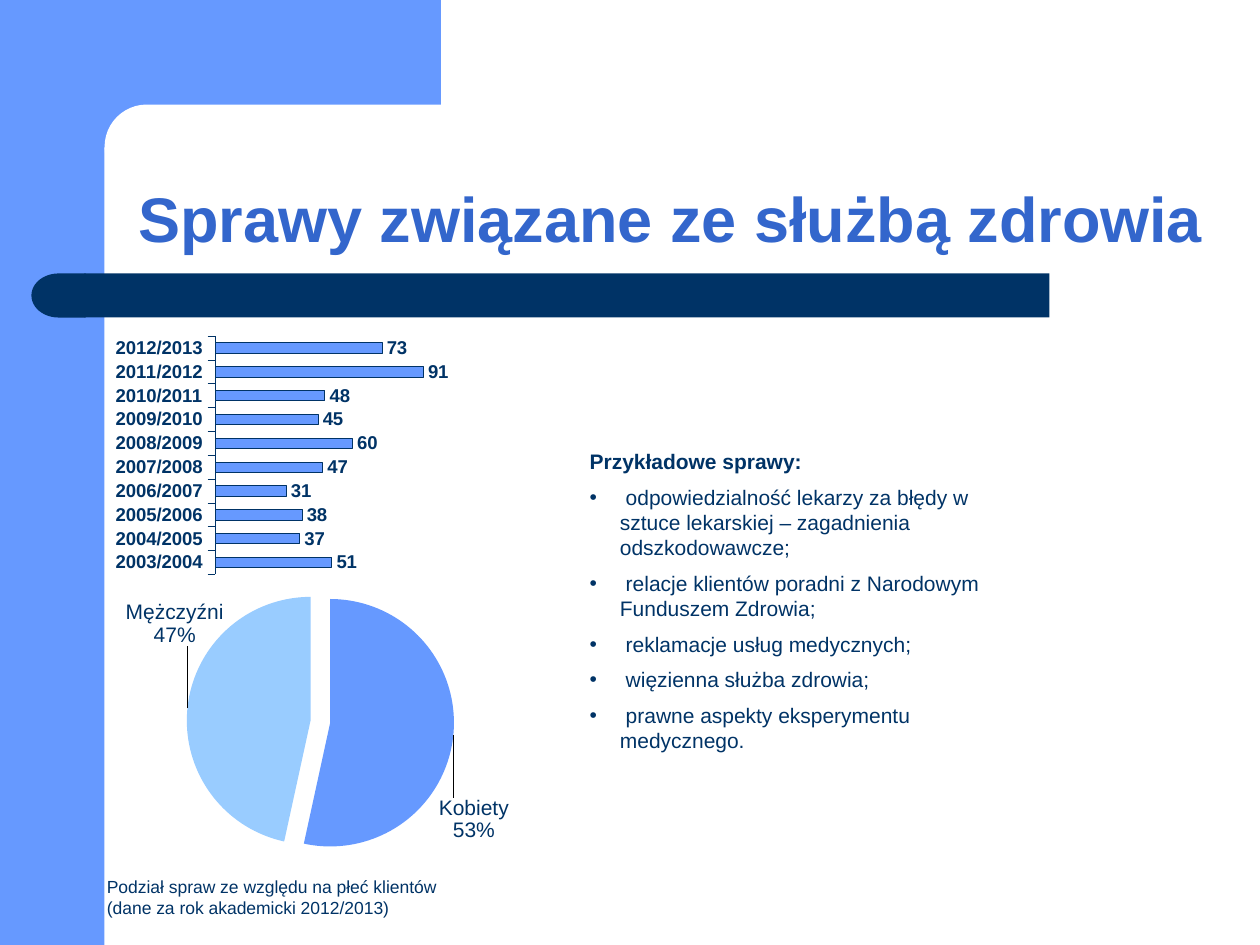
import copy
import pptx
import pptx.util
import pptx.chart.data
import pptx.dml.color
import pptx.enum.chart
import pptx.enum.shapes
import pptx.enum.text
import pptx.oxml
import pptx.oxml.ns
from pptx.util import Inches, Pt

THEME = {
    "font": "Arial",
    "blue": "6699FF", "light": "99CCFF", "navy": "003366",
    "title": "3366CC", "white": "FFFFFF",
    "title_size": 36, "body_size": 12, "caption_size": 10, "axis_size": 10.6,
}

TITLE = "Sprawy związane ze służbą zdrowia"
LIST_HEADING = "Przykładowe sprawy:"
CASES = [
    " odpowiedzialność lekarzy za błędy w sztuce lekarskiej – zagadnienia odszkodowawcze;",
    " relacje klientów poradni z Narodowym Funduszem Zdrowia;",
    " reklamacje usług medycznych;",
    " więzienna służba zdrowia;",
    " prawne aspekty eksperymentu medycznego.",
]
CAPTION = "Podział spraw ze względu na płeć klientów (dane za rok akademicki 2012/2013)"
FIRST_YEAR = 2003
CASES_PER_YEAR = [51, 37, 38, 31, 47, 60, 45, 48, 91, 73]
CLIENTS = {"Kobiety": 39, "Mężczyźni": 34}
SLICES = [("blue", (-0.04, 0.2)), ("light", (0.08, -0.2))]

SHAPE = pptx.enum.shapes.MSO_SHAPE
BACKDROP = [
    (SHAPE.RECTANGLE, (0, 0, 0.83, 7.5), "blue", None),
    (SHAPE.RECTANGLE, (0.75, 0, 2.75, 1.17), "blue", None),
    (SHAPE.ROUNDED_RECTANGLE, (0.83, 0.83, 5.58, 0.67), "white", 0.5),
    (SHAPE.RECTANGLE, (0.67, 2.17, 7.66, 0.35), "navy", None),
    (SHAPE.FLOWCHART_DELAY, (0.25, 2.17, 0.43, 0.35), "navy", None),
]
PLACES = {
    "title": (1, 0.83, 8.75, 1.25),
    "list": (4.58, 3.51, 3.67, 2.2),
    "bars": (0.83, 2.49, 3.13, 2.2),
    "pie": (0.27, 4.54, 4.33, 2.4),
    "caption": (0.75, 6.9, 3.03, 0.43),
}
BAR_PLOT = (0.28, 0.08, 0.58, 0.86)
PIE_PLOT = (0.28, 0.05, 0.49, 0.89)
EXPLOSION = 8
HANGING = 0.24


def color(name):
    return pptx.dml.color.RGBColor.from_string(THEME[name])


def inches(place):
    return [Inches(length) for length in place]


def put(shape, place):
    shape.left, shape.top, shape.width, shape.height = inches(place)


def style(font, size, tint="navy", bold=False):
    font.name = THEME["font"]
    font.size = Pt(THEME[size])
    font.bold = bold
    font.color.rgb = color(tint)


def fill(target, tint):
    target.fill.solid()
    target.fill.fore_color.rgb = color(tint)


def chart_xml(tag, content="", attributes=""):
    names = pptx.oxml.ns.nsdecls("c")
    return pptx.oxml.parse_xml(f"<c:{tag} {names} {attributes}>{content}</c:{tag}>")


def add_backdrop(page):
    for kind, place, tint, rounding in BACKDROP:
        shape = page.shapes.add_shape(kind, *inches(place))
        shape.shadow.inherit = False
        fill(shape, tint)
        shape.line.fill.background()
        if rounding is not None:
            shape.adjustments[0] = rounding
        if kind == SHAPE.FLOWCHART_DELAY:
            shape.element.spPr.xfrm.set("flipH", "1")


def bring_forward(shape):
    shape.element.getparent().append(shape.element)


def add_title(page):
    title = page.shapes.title
    put(title, PLACES["title"])
    bring_forward(title)
    frame = title.text_frame
    frame.text = TITLE
    frame.auto_size = pptx.enum.text.MSO_AUTO_SIZE.NONE
    frame.vertical_anchor = pptx.enum.text.MSO_ANCHOR.BOTTOM
    para = frame.paragraphs[0]
    para.alignment = pptx.enum.text.PP_ALIGN.LEFT
    para.line_spacing = 0.9
    style(para.font, "title_size", "title", True)


def set_bullet(para, bulleted):
    props = para._p.get_or_add_pPr()
    indent = Inches(HANGING) if bulleted else 0
    props.set("marL", str(indent))
    props.set("indent", str(-indent))
    tag = 'a:buChar char="•"' if bulleted else "a:buNone"
    props.append(pptx.oxml.parse_xml(f"<{tag} {pptx.oxml.ns.nsdecls('a')}/>"))


def add_list(page):
    body = page.placeholders[1]
    put(body, PLACES["list"])
    bring_forward(body)
    frame = body.text_frame
    frame.text = "\n".join([LIST_HEADING] + CASES)
    frame.auto_size = pptx.enum.text.MSO_AUTO_SIZE.NONE
    for number, para in enumerate(frame.paragraphs):
        para.space_before = Pt(6)
        set_bullet(para, number > 0)
        style(para.font, "body_size", bold=number == 0)


def add_caption(page):
    box = page.shapes.add_textbox(*inches(PLACES["caption"]))
    box.text_frame.word_wrap = True
    box.text_frame.text = CAPTION
    para = box.text_frame.paragraphs[0]
    para.space_before = Pt(5)
    style(para.font, "caption_size")


def add_chart(page, kind, place, plot_place, categories, values):
    data = pptx.chart.data.CategoryChartData()
    data.categories = categories
    data.add_series("Series 1", values)
    chart = page.shapes.add_chart(kind, *inches(place), data).chart
    chart.has_legend = False
    chart.has_title = False
    style(chart.font, "body_size")
    sides = "".join(f'<c:{side} val="{share}"/>' for side, share in zip("xywh", plot_place))
    layout = chart_xml("layout", '<c:manualLayout><c:layoutTarget val="inner"/>'
                       '<c:xMode val="edge"/><c:yMode val="edge"/>'
                       f"{sides}</c:manualLayout>")
    area = chart.element.chart.plotArea
    for old in area.findall(pptx.oxml.ns.qn("c:layout")):
        area.remove(old)
    area.insert(0, layout)
    labels = chart.plots[0].series[0].data_labels
    labels.position = pptx.enum.chart.XL_LABEL_POSITION.OUTSIDE_END
    labels.show_value = True
    return chart


def add_bars(page):
    years = [f"{year}/{year + 1}" for year in range(FIRST_YEAR, FIRST_YEAR + len(CASES_PER_YEAR))]
    chart = add_chart(page, pptx.enum.chart.XL_CHART_TYPE.BAR_CLUSTERED,
                      PLACES["bars"], BAR_PLOT, years, CASES_PER_YEAR)
    plot = chart.plots[0]
    plot.vary_by_categories = False
    plot.gap_width = 130
    series = plot.series[0]
    style(series.data_labels.font, "axis_size", bold=True)
    fill(series.format, "blue")
    series.format.line.color.rgb = color("navy")
    series.format.line.width = Pt(0.25)
    axis = chart.category_axis
    axis.major_tick_mark = pptx.enum.chart.XL_TICK_MARK.OUTSIDE
    axis.format.line.color.rgb = color("navy")
    axis.format.line.width = Pt(0.15)
    style(axis.tick_labels.font, "axis_size", bold=True)
    scale = chart.value_axis
    scale.minimum_scale, scale.maximum_scale = 0, 100
    scale.has_major_gridlines = False
    scale.visible = False


def slice_label(number, shift, text_format):
    across, down = shift
    label = chart_xml("dLbl", f'<c:idx val="{number}"/><c:layout><c:manualLayout>'
                      f'<c:x val="{across}"/><c:y val="{down}"/></c:manualLayout></c:layout>'
                      '<c:dLblPos val="outEnd"/><c:showLegendKey val="0"/>'
                      '<c:showVal val="0"/><c:showCatName val="1"/><c:showSerName val="0"/>'
                      '<c:showPercent val="1"/><c:showBubbleSize val="0"/>'
                      "<c:separator>\n</c:separator>")
    label.insert(2, copy.deepcopy(text_format))
    return label


def add_pie(page):
    chart = add_chart(page, pptx.enum.chart.XL_CHART_TYPE.PIE,
                      PLACES["pie"], PIE_PLOT, list(CLIENTS), list(CLIENTS.values()))
    series = chart.plots[0].series[0]
    labels = series.data_labels
    labels.show_category_name = True
    style(labels.font, "body_size")
    text_format = labels._element.find(pptx.oxml.ns.qn("c:txPr"))
    for number, (tint, shift) in enumerate(SLICES):
        slice_format = series.points[number].format
        fill(slice_format, tint)
        slice_format.line.fill.background()
        labels._element.insert(number, slice_label(number, shift, text_format))
    explosion = chart_xml("explosion", attributes=f'val="{EXPLOSION}"')
    series._element.find(pptx.oxml.ns.qn("c:dPt")).addprevious(explosion)


def main():
    deck = pptx.Presentation()
    deck.slide_width, deck.slide_height = Inches(10), Inches(7.5)
    page = deck.slides.add_slide(deck.slide_layouts[1])
    add_backdrop(page)
    add_title(page)
    add_list(page)
    add_bars(page)
    add_caption(page)
    add_pie(page)
    deck.save("out.pptx")


if __name__ == "__main__":
    main()
